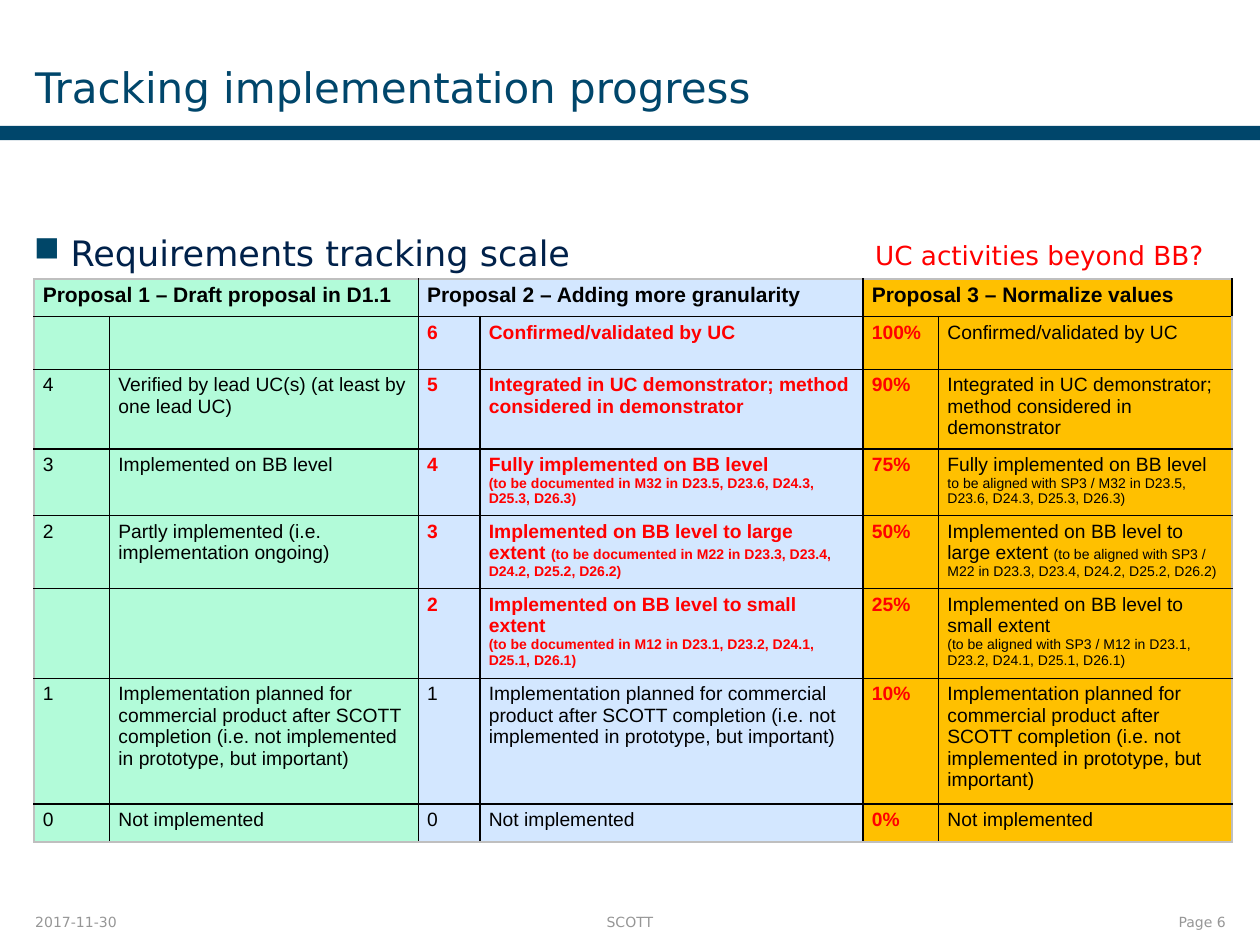
from dataclasses import dataclass

from lxml import etree
from pptx import Presentation
from pptx.dml.color import RGBColor
from pptx.enum.shapes import MSO_SHAPE
from pptx.enum.text import MSO_ANCHOR, PP_ALIGN
from pptx.oxml import parse_xml
from pptx.oxml.ns import nsdecls, qn
from pptx.util import Inches, Pt

RECTANGLE = MSO_SHAPE.RECTANGLE
TOP, MIDDLE, BOTTOM = MSO_ANCHOR.TOP, MSO_ANCHOR.MIDDLE, MSO_ANCHOR.BOTTOM
LEFT, CENTER, RIGHT = PP_ALIGN.LEFT, PP_ALIGN.CENTER, PP_ALIGN.RIGHT
SLIDE_WIDTH, SLIDE_HEIGHT = Inches(10), Inches(7.5)


@dataclass(frozen=True)
class Theme:
    """Colours, fonts and type sizes of the slide."""
    bar: str = "00466B"
    bullet: str = "004668"
    body: str = "00214A"
    black: str = "000000"
    red: str = "FF0000"
    grey: str = "969696"
    frame: str = "BFBFBF"
    proposals: tuple = ("B2FBD9", "D3E7FF", "FFC000")
    font: str = "DejaVu Sans"
    table_font: str = "Arial"
    title_size: int = 24
    body_size: int = 20
    question_size: int = 15
    header_size: int = 12
    cell_size: int = 11
    small_size: int = 8


THEME = Theme()
COLUMN_SHARES = (6, 24.5, 4.9, 30.4, 6, 23.3)
ROW_SHARES = (4, 5.6, 8, 6.7, 7.3, 9, 12.3, 4)
HEADERS = ("Proposal 1 – Draft proposal in D1.1",
           "Proposal 2 – Adding more granularity",
           "Proposal 3 – Normalize values")
CONFIRMED = "Confirmed/validated by UC"
INTEGRATED = "Integrated in UC demonstrator; method considered in demonstrator"
FULLY = "Fully implemented on BB level\n"
LARGE = "Implemented on BB level to large extent |"
SMALL = "Implemented on BB level to small extent\n"
PLANNED = ("Implementation planned for commercial product after SCOTT completion "
           "(i.e. not implemented in prototype, but important)")
MISSING = "Not implemented"
M32 = "M32 in D23.5, D23.6, D24.3, D25.3, D26.3)"
M22 = "M22 in D23.3, D23.4, D24.2, D25.2, D26.2)"
M12 = "M12 in D23.1, D23.2, D24.1, D25.1, D26.1)"
DOCUMENTED = "(to be documented in "
ALIGNED = "to be aligned with SP3 / "
LEVELS = (
    ("", "", "6", CONFIRMED, "100%", CONFIRMED),
    ("4", "Verified by lead UC(s) (at least by one lead UC)",
     "5", INTEGRATED, "90%", INTEGRATED),
    ("3", "Implemented on BB level",
     "4", FULLY + DOCUMENTED + M32, "75%", FULLY + ALIGNED + M32),
    ("2", "Partly implemented (i.e. implementation ongoing)",
     "3", LARGE + DOCUMENTED + M22, "50%", LARGE + "(" + ALIGNED + M22),
    ("", "", "2", SMALL + DOCUMENTED + M12, "25%", SMALL + "(" + ALIGNED + M12),
    ("1", PLANNED, "1", PLANNED, "10%", PLANNED),
    ("0", MISSING, "0", MISSING, "0%", MISSING),
)


def across(share):
    """Turn a percentage of the slide's width into a length."""
    return int(SLIDE_WIDTH * share / 100)


def down(share):
    """Turn a percentage of the slide's height into a length."""
    return int(SLIDE_HEIGHT * share / 100)


def area(left, top, width, height):
    """Turn percentages of the slide into a position and a size."""
    return across(left), down(top), across(width), down(height)


def style(font, size, color, name=THEME.font, bold=False):
    """Set the look of a font."""
    font.name, font.size, font.bold = name, Pt(size), bold
    font.color.rgb = RGBColor.from_string(color)


def add_text(page, place, text, size, color, align=LEFT, anchor=TOP, inset=0):
    """Add a text box of one paragraph and return the paragraph."""
    frame = page.shapes.add_textbox(*area(*place)).text_frame
    frame.word_wrap = True
    frame.vertical_anchor = anchor
    frame.margin_left = frame.margin_right = Inches(inset)
    frame.margin_top = frame.margin_bottom = Inches(inset)
    frame.text = text
    para = frame.paragraphs[0]
    para.alignment = align
    style(para.runs[0].font, size, color)
    return para


def add_bullet(para):
    """Give a paragraph a square bullet and a hanging indent."""
    props = para._p.get_or_add_pPr()
    props.set("marL", str(Inches(0.29)))
    props.set("indent", str(-Inches(0.29)))
    color = etree.SubElement(props, qn("a:buClr"))
    etree.SubElement(color, qn("a:srgbClr"), val=THEME.bullet)
    etree.SubElement(props, qn("a:buChar"), char="■")


def add_bar(page):
    """Add the band below the title."""
    bar = page.shapes.add_shape(RECTANGLE, *area(0, 13.33, 100, 1.5))
    bar.shadow.inherit = False
    bar.fill.solid()
    bar.fill.fore_color.rgb = RGBColor.from_string(THEME.bar)
    bar.line.fill.background()


def paint_cell(cell, fill, outer_sides):
    """Set the borders, fill and margins of a cell."""
    props = cell._tc.get_or_add_tcPr()
    for side in "LRTB":
        color = THEME.frame if side in outer_sides else THEME.black
        props.append(parse_xml(
            f'<a:ln{side} {nsdecls("a")} w="{Pt(1)}"><a:solidFill>'
            f'<a:srgbClr val="{color}"/></a:solidFill></a:ln{side}>'))
    cell.fill.solid()
    cell.fill.fore_color.rgb = RGBColor.from_string(fill)
    cell.margin_left = cell.margin_right = Inches(0.07)
    cell.margin_top = cell.margin_bottom = Inches(0.04)


def fill_cell(cell, text, size, color, bold):
    """Write a cell; text after a line end or a bar is a small note."""
    frame = cell.text_frame
    for row, line in enumerate(text.split("\n")):
        para = frame.add_paragraph() if row else frame.paragraphs[0]
        for part, words in enumerate(line.split("|")):
            span = para.add_run()
            span.text = words
            span_size = THEME.small_size if row or part else size
            style(span.font, span_size, color, THEME.table_font, bold)


def is_changed(column, level):
    """Tell whether a cell differs from the first proposal."""
    return column == 4 or column in (2, 3) and int(level[2]) > 1


def add_scale_table(page):
    """Add the table that compares the three proposals."""
    rows, columns = len(ROW_SHARES), len(COLUMN_SHARES)
    place = area(2.7, 29.5, sum(COLUMN_SHARES), sum(ROW_SHARES))
    table = page.shapes.add_table(rows, columns, *place).table
    for column, share in zip(table.columns, COLUMN_SHARES):
        column.width = across(share)
    for row, share in zip(table.rows, ROW_SHARES):
        row.height = down(share)
    for row in range(rows):
        for column in range(columns):
            edges = {"L": column == 0, "R": column == columns - 1,
                     "T": row == 0, "B": row == rows - 1}
            outer = [side for side, is_outer in edges.items() if is_outer]
            paint_cell(table.cell(row, column), THEME.proposals[column // 2], outer)
    for index, header in enumerate(HEADERS):
        cell = table.cell(0, 2 * index)
        cell.merge(table.cell(0, 2 * index + 1))
        fill_cell(cell, header, THEME.header_size, THEME.black, True)
    for row, level in enumerate(LEVELS, 1):
        for column, text in enumerate(level):
            if text:
                changed = is_changed(column, level)
                color = THEME.red if changed else THEME.black
                fill_cell(table.cell(row, column), text, THEME.cell_size, color, changed)


def add_footer(page):
    """Add the date, the project and the page number."""
    for left, width, text, align in ((2.8, 9.4, "2017-11-30", LEFT),
                                     (31.5, 37, "SCOTT", CENTER),
                                     (85.5, 11.8, "Page 6", RIGHT)):
        add_text(page, (left, 96.53, width, 2.13), text,
                 THEME.small_size, THEME.grey, align, MIDDLE)


def main():
    """Build the slide and save it."""
    deck = Presentation()
    deck.slide_width, deck.slide_height = SLIDE_WIDTH, SLIDE_HEIGHT
    page = deck.slides.add_slide(deck.slide_layouts[6])
    add_bar(page)
    add_text(page, (2.8, 0.67, 72, 11.2), "Tracking implementation progress",
             THEME.title_size, THEME.bar, anchor=BOTTOM)
    add_bullet(add_text(page, (2.7, 24.53, 65, 8.13), "Requirements tracking scale",
                        THEME.body_size, THEME.body))
    add_scale_table(page)
    add_text(page, (67.7, 24.53, 29.6, 5.07), "UC activities beyond BB?",
             THEME.question_size, THEME.red, CENTER, inset=0.06)
    add_footer(page)
    deck.save("out.pptx")


if __name__ == "__main__":
    main()
